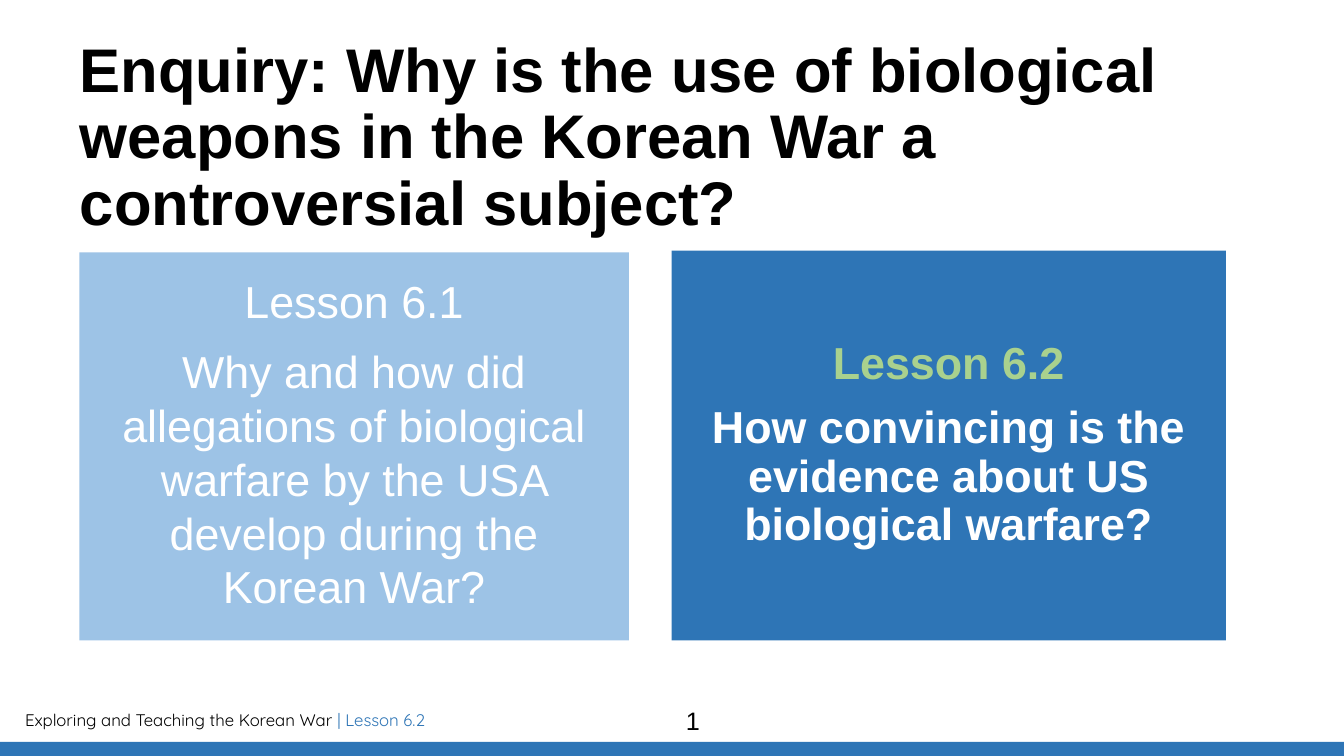
from pptx import Presentation
from pptx.dml.color import RGBColor
from pptx.enum.shapes import MSO_SHAPE as Shape
from pptx.enum.text import MSO_ANCHOR as Anchor, PP_ALIGN as Align
from pptx.util import Pt

COLOURS = {
    "black": "000000",
    "white": "FFFFFF",
    "blue": "2E75B6",
    "pale blue": "9DC3E6",
    "green": "A9D18E",
}


def add_span(para, text, size, colour, bold=False, font="Arial"):
    span = para.add_run()
    span.text = text
    span.font.name = font
    span.font.size = Pt(size)
    span.font.bold = bold
    span.font.color.rgb = RGBColor.from_string(COLOURS[colour])


def add_panel(left, top, width, height, colour):
    """Add a plain filled rectangle without outline or shadow."""
    panel = page.shapes.add_shape(
        Shape.RECTANGLE, Pt(left), Pt(top), Pt(width), Pt(height))
    panel.shadow.inherit = False
    panel.fill.solid()
    panel.fill.fore_color.rgb = RGBColor.from_string(COLOURS[colour])
    panel.line.fill.background()
    return panel


deck = Presentation()
deck.slide_width, deck.slide_height = Pt(960), Pt(540)
page = deck.slides.add_slide(deck.slide_layouts[5])

# Footer
footer = page.shapes.add_textbox(Pt(10.8), Pt(503.3), Pt(563), Pt(21.6))
footer.text_frame.word_wrap = True
credit = footer.text_frame.paragraphs[0]
add_span(credit, "Exploring and Teaching the Korean War ", 12, "black", font="Quicksand")
add_span(credit, "| Lesson 6.2", 12, "blue", font="Quicksand")
add_panel(0, 530, 960, 10, "blue")

# Title
title = page.shapes.title
title.left, title.top, title.width, title.height = Pt(57), Pt(28), Pt(828), Pt(104.4)
frame = title.text_frame
frame.word_wrap = True
frame.vertical_anchor = Anchor.TOP
frame.margin_left = frame.margin_right = frame.margin_top = frame.margin_bottom = 0
heading = frame.paragraphs[0]
heading.alignment = Align.LEFT
heading.line_spacing = 0.9
add_span(heading, "Enquiry: Why is the use of biological weapons in the Korean War "
         "a controversial subject?", 44, "black", bold=True)

# Lesson panels: place, fill, bold, then (text, colour, line spacing) per paragraph
lessons = [
    ((56.7, 180.2, 392.6, 277.3), "pale blue", False, [
        ("Lesson 6.1", "white", 0.9),
        ("Why and how did allegations of biological warfare by the USA "
         "develop during the Korean War?", "white", 1.0)]),
    ((479.7, 179.1, 396, 278.4), "blue", True, [
        ("Lesson 6.2", "green", 0.9),
        ("How convincing is the evidence about US biological warfare?", "white", 0.9)]),
]
for place, fill, bold, lines in lessons:
    frame = add_panel(*place, fill).text_frame
    frame.word_wrap = True
    frame.vertical_anchor = Anchor.MIDDLE
    frame.margin_left = frame.margin_right = Pt(10)
    frame.margin_top = frame.margin_bottom = Pt(10)
    for index, (text, colour, spacing) in enumerate(lines):
        para = frame.add_paragraph() if index else frame.paragraphs[0]
        para.alignment = Align.CENTER
        para.line_spacing = spacing
        para.space_after = Pt(0 if index else 11.2)
        add_span(para, text, 32, colour, bold)

# Page number
number = page.shapes.add_textbox(Pt(311), Pt(500.4), Pt(368), Pt(29))
number.text_frame.word_wrap = True
para = number.text_frame.paragraphs[0]
para.alignment = Align.CENTER
add_span(para, "1", 18, "black")

deck.save("out.pptx")
